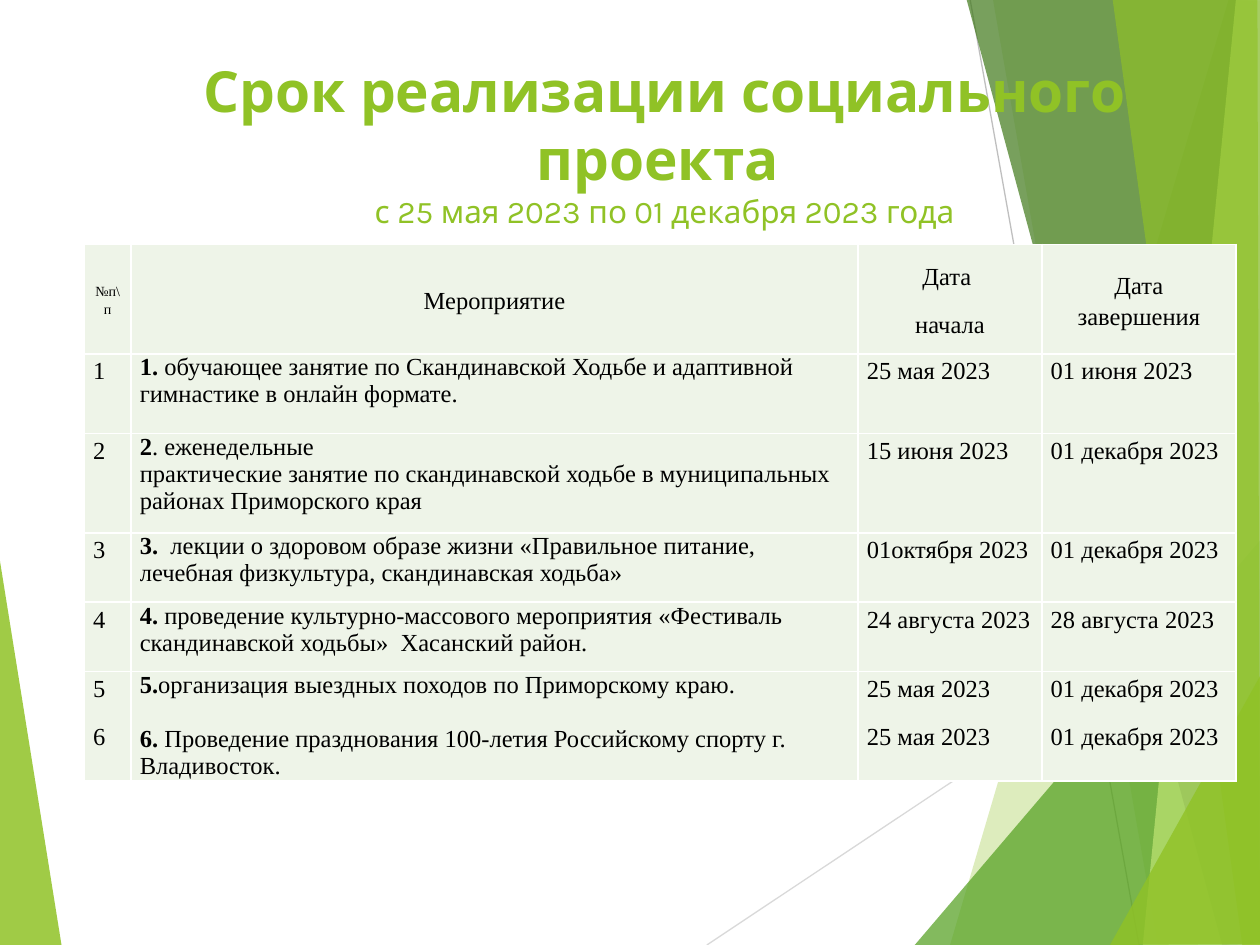
"""Build the project schedule slide: faceted backdrop, title and table of events."""
from copy import deepcopy
from lxml.etree import SubElement
from pptx import Presentation
from pptx.dml.color import RGBColor
from pptx.enum.shapes import MSO_CONNECTOR as LINK
from pptx.enum.text import MSO_ANCHOR as ANCHOR, MSO_AUTO_SIZE as AUTO, PP_ALIGN as ALIGN
from pptx.oxml import parse_xml
from pptx.oxml.ns import nsdecls, qn
from pptx.util import Inches, Pt

LIME, PALE, WHITE, BLACK = "90C226", "EEF4E8", "FFFFFF", "000000"
TITLE = [("Срок реализации социального проекта ", 32.4, True),
         ("с 25 мая 2023 по 01 декабря 2023 года", 18, False)]
HEAD = [["№п\\п"], ["Мероприятие"], ["Дата ", "начала"], ["Дата завершения"]]
ROWS = [
    (["1"], [("1.", " обучающее занятие по Скандинавской Ходьбе и адаптивной "
              "гимнастике в онлайн формате.")],
     ["25 мая 2023"], ["01 июня 2023"]),
    (["2"], [("2", ". еженедельные"),
             ("", "практические занятие по скандинавской ходьбе в муниципальных "
              "районах Приморского края")],
     ["15 июня 2023"], ["01 декабря 2023"]),
    (["3"], [("3.", "  лекции о здоровом образе жизни «Правильное питание, "
              "лечебная физкультура, скандинавская ходьба»")],
     ["01октября 2023"], ["01 декабря 2023"]),
    (["4"], [("4.", " проведение культурно-массового мероприятия «Фестиваль "
              "скандинавской ходьбы»  Хасанский район.")],
     ["24 августа 2023"], ["28 августа 2023"]),
    (["5", "6"], [("5.", "организация выездных походов по Приморскому краю."),
                  ("6.", " Проведение празднования 100-летия Российскому спорту "
                   "г. Владивосток.")],
     ["25 мая 2023"] * 2, ["01 декабря 2023"] * 2),
]
WIDTHS = [0.37, 5.77, 1.46, 1.54]
HEIGHTS = [0.87, 0.63, 0.79, 0.55, 0.55, 0.87]
LEFT = (LIME, 85, [(-0.01, 4.39), (0.49, 7.51), (-0.01, 7.5)])
RAYS = [("D9D9D9", (5.61, 7.5, 10.01, 4.57)), ("BFBFBF", (7.7, 0, 9.04, 7.5))]
FACETS = [
    (LIME, 30, [(9.75, 0), (7.54, 7.5), (10.02, 7.51), (10.01, 0.01)]),
    (LIME, 20, [(7.88, -0.01), (9.19, 7.5), (10.01, 7.5), (10.01, -0.01)]),
    ("54A021", 72, [(7.26, 7.5), (10, 4.29), (10.01, 7.5)]),
    ("3F7819", 70, [(7.67, -0.01), (9.7, 7.5), (10.01, 7.49), (10.01, -0.01)]),
    ("C0E474", 70, [(9.81, -0.01), (9.07, 7.5), (10.01, 7.5), (10, -0.01)]),
    (LIME, 65, [(8.83, -0.01), (9.86, 7.5), (10, 7.5), (9.98, -0.01)]),
    (LIME, 80, [(8.81, 7.5), (10.01, 5.35), (10.01, 7.49)]),
]


def tint(color, code):
    color.rgb = RGBColor.from_string(code)


def style(obj, **vals):
    for name, val in vals.items():
        setattr(obj, name, val)


def facet(shapes, code, alpha, points):
    pts = [(Inches(x), Inches(y)) for x, y in points]
    pen = shapes.build_freeform(*pts[0])
    pen.add_line_segments(pts[1:], close=True)
    shape = pen.convert_to_shape()
    shape.shadow.inherit = False
    shape.line.fill.background()
    shape.fill.solid()
    tint(shape.fill.fore_color, code)
    rgb = next(shape._element.spPr.iter(qn("a:srgbClr")))
    SubElement(rgb, qn("a:alpha")).set("val", str(alpha * 1000))


def ray(shapes, code, ends):
    line = shapes.add_connector(LINK.STRAIGHT, *map(Inches, ends))
    line.line.width = Pt(0.75)
    tint(line.line.color, code)
    SubElement(line._element.spPr, qn("a:effectLst"))


def write(para, text, face, size, code, bold=False):
    run = para.add_run()
    run.text = text
    style(run.font, name=face, size=Pt(size), bold=bold)
    tint(run.font.color, code)
    return run


def set_title(shape):
    style(shape, left=Inches(0.9), top=Inches(0.4), width=Inches(8.75), height=Inches(1.46))
    frame = shape.text_frame
    style(frame, word_wrap=True, auto_size=AUTO.NONE, vertical_anchor=ANCHOR.MIDDLE)
    para = frame.paragraphs[0]
    para.alignment = ALIGN.CENTER
    (top, big, bold), (sub, small, thin) = TITLE
    run = write(para, top, "Karla", big, LIME, bold)
    para._p.add_br().insert(0, deepcopy(run._r.rPr))
    write(para, sub, "Karla", small, LIME, thin)


def edge(cell):
    for i, side in enumerate("LRTB"):
        cell._tc.get_or_add_tcPr().insert(i, parse_xml(
            f'<a:ln{side} {nsdecls("a")} w="12700"><a:solidFill>'
            f'<a:srgbClr val="{WHITE}"/></a:solidFill></a:ln{side}>'))


def set_cell(cell, paras, row, col):
    pad = Inches(0.07)
    style(cell, margin_left=pad, margin_right=pad, margin_top=0, margin_bottom=0,
          vertical_anchor=ANCHOR.TOP if row else ANCHOR.MIDDLE)
    cell.fill.solid()
    tint(cell.fill.fore_color, PALE)
    edge(cell)
    frame = cell.text_frame
    for i, item in enumerate(paras):
        para = frame.add_paragraph() if i else frame.paragraphs[0]
        mark, text = item if isinstance(item, tuple) else ("", item)
        if row and col == 1:
            style(para, alignment=ALIGN.LEFT, space_before=Pt(15.5 if i and mark else 0))
        else:
            style(para, alignment=ALIGN.JUSTIFY if row else ALIGN.CENTER,
                  line_spacing=1.15, space_after=Pt(10))
        size = 14 if row or col else 8
        if mark:
            write(para, mark, "Times New Roman", size, BLACK, True)
        write(para, text, "Times New Roman", size, BLACK)


def add_plan(shapes):
    grid = [HEAD, *ROWS]
    table = shapes.add_table(len(grid), len(WIDTHS), Inches(0.67), Inches(1.94),
                             Inches(sum(WIDTHS)), Inches(sum(HEIGHTS))).table
    style(table, first_row=False, horz_banding=False)
    for col, width in zip(table.columns, WIDTHS):
        col.width = Inches(width)
    for r, (row, height) in enumerate(zip(grid, HEIGHTS)):
        table.rows[r].height = Inches(height)
        for c, paras in enumerate(row):
            set_cell(table.cell(r, c), paras, r, c)


def main():
    deck = Presentation()
    style(deck, slide_width=Inches(10), slide_height=Inches(7.5))
    shapes = deck.slides.add_slide(deck.slide_layouts[5]).shapes
    title = shapes.title
    facet(shapes, *LEFT)
    for item in RAYS:
        ray(shapes, *item)
    for item in FACETS:
        facet(shapes, *item)
    shapes._spTree.append(title._element)
    set_title(title)
    add_plan(shapes)
    deck.save("out.pptx")


if __name__ == "__main__":
    main()
